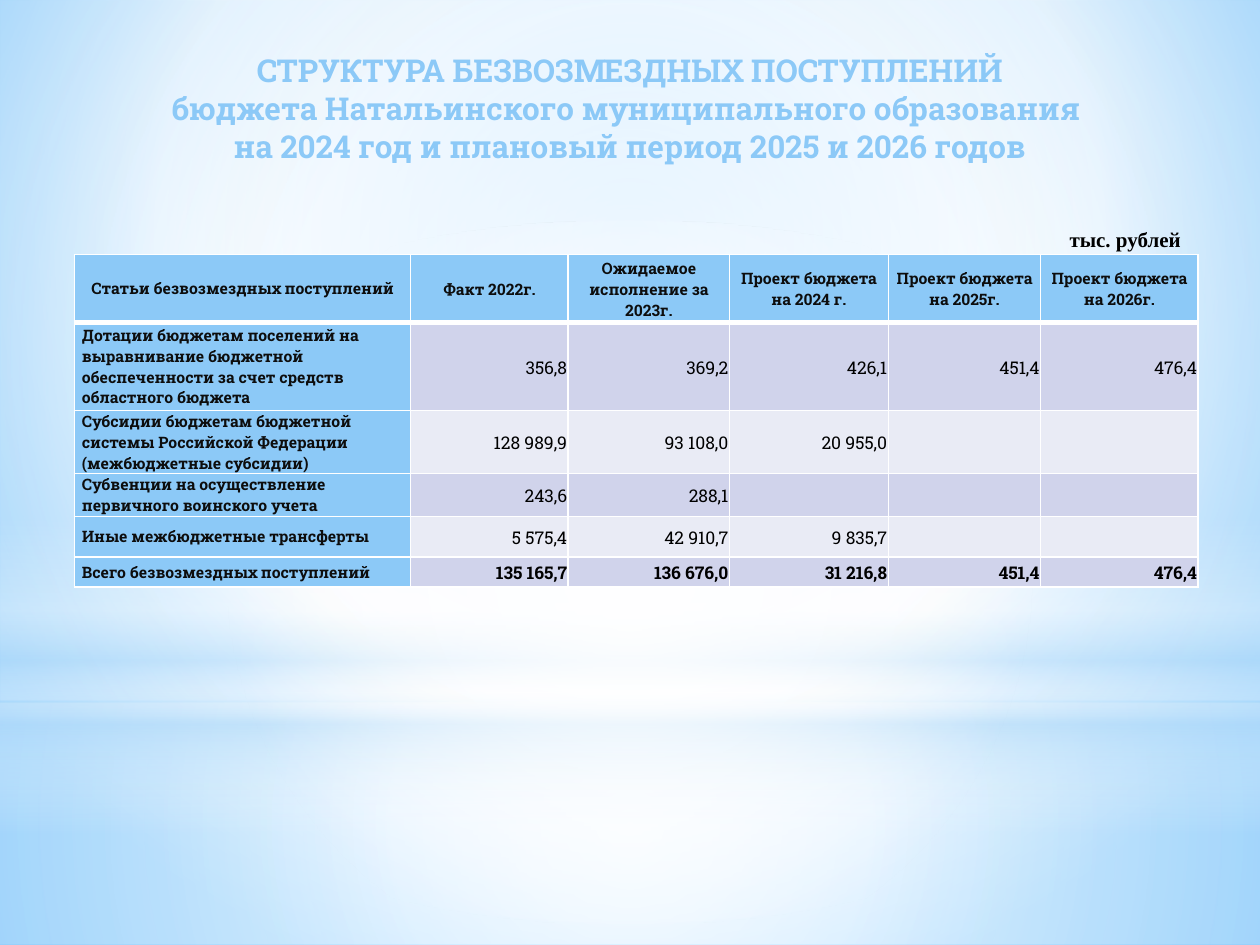
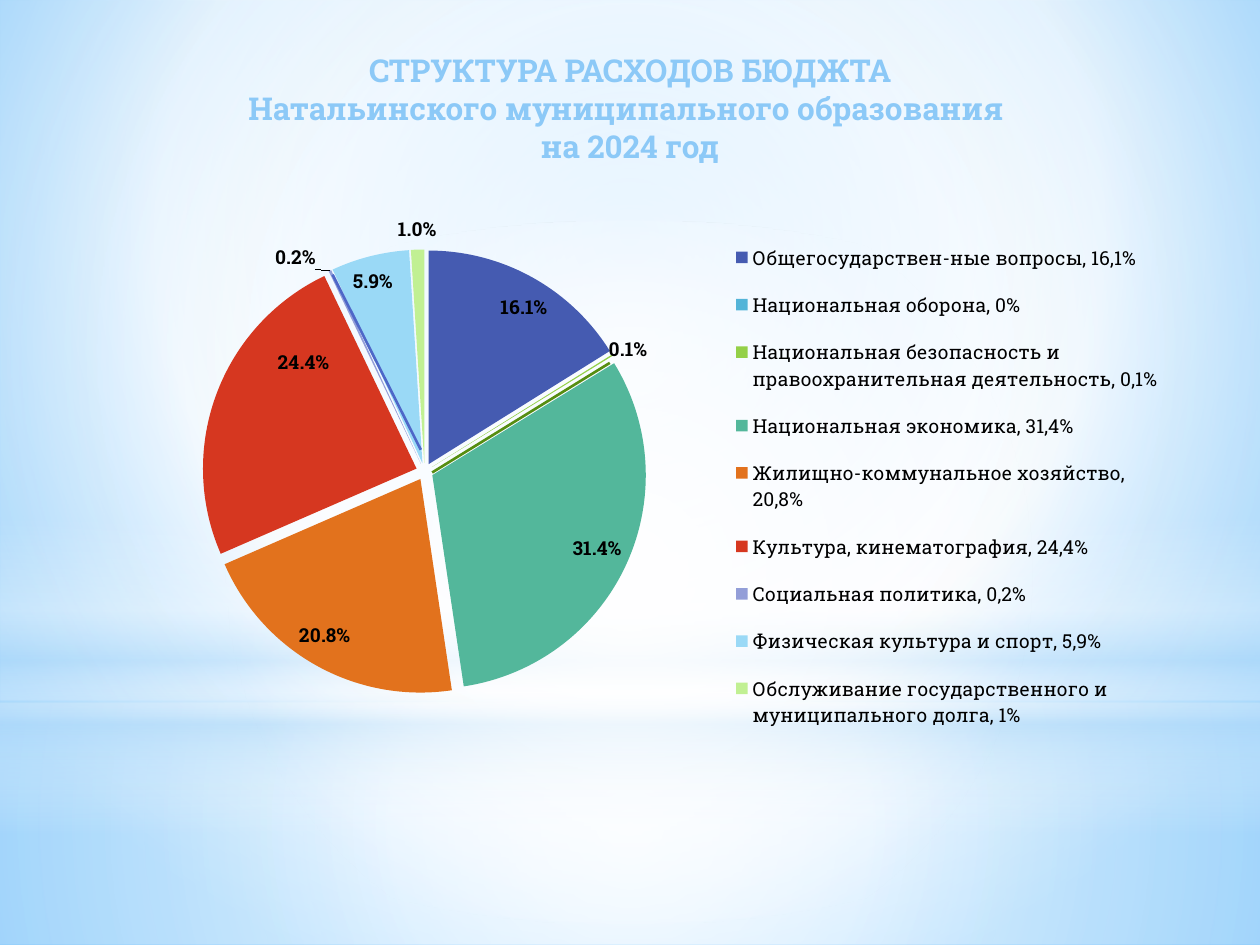
import pptx
import pptx.chart.data
import pptx.dml.color
import pptx.enum.chart
import pptx.enum.shapes
import pptx.enum.text
import pptx.oxml
import pptx.oxml.ns
import pptx.util

Inches = pptx.util.Inches
Pt = pptx.util.Pt
RGB = pptx.dml.color.RGBColor
PP_ALIGN = pptx.enum.text.PP_ALIGN
MIDDLE = pptx.enum.text.MSO_ANCHOR.MIDDLE
MSO_SHAPE = pptx.enum.shapes.MSO_SHAPE
STRAIGHT = pptx.enum.shapes.MSO_CONNECTOR.STRAIGHT
BEST_FIT = pptx.enum.chart.XL_LABEL_POSITION.BEST_FIT

SKY = RGB(0x8C, 0xC9, 0xF7)
BLACK = RGB(0x00, 0x00, 0x00)
INK = RGB(0x0D, 0x0D, 0x0D)
BAND_DARK = RGB(0xD0, 0xD3, 0xEB)
BAND_LIGHT = RGB(0xE9, 0xEB, 0xF5)
BLUE = RGB(0x4E, 0x67, 0xC8)
GREEN = RGB(0x56, 0x8D, 0x11)
SLICES = [RGB(0x45, 0x5B, 0xB1), RGB(0x53, 0xB4, 0xD8), RGB(0x94, 0xD0, 0x48),
          RGB(0x53, 0xB7, 0x9B), RGB(0xE2, 0x72, 0x1D), RGB(0xD6, 0x37, 0x20),
          RGB(0x93, 0x9E, 0xD8), RGB(0x9A, 0xD9, 0xF6), RGB(0xC1, 0xF0, 0x93)]
FONT = "Roboto Slab"
NS = pptx.oxml.ns.nsdecls


def gradient(stops, to=None):
    gs = "".join(
        f'<a:gs pos="{pos * 1000}"><a:srgbClr val="{color}">'
        f'<a:alpha val="{alpha * 1000}"/></a:srgbClr></a:gs>'
        for pos, color, alpha in stops)
    direction = '<a:lin ang="5400000" scaled="0"/>'
    if to:
        l, t, r, b = [v * 1000 for v in to]
        direction = (f'<a:path path="circle"><a:fillToRect l="{l}" t="{t}" '
                     f'r="{r}" b="{b}"/></a:path>')
    return pptx.oxml.parse_xml(f'<a:gradFill {NS("a")} rotWithShape="1">'
                               f'<a:gsLst>{gs}</a:gsLst>{direction}</a:gradFill>')


def style(font, size, color=BLACK, bold=True, name=FONT):
    for key, value in {"size": Pt(size), "bold": bold, "name": name}.items():
        setattr(font, key, value)
    font.color.rgb = color


prs = pptx.Presentation()
prs.slide_width, prs.slide_height = Inches(10), Inches(7.5)

master = prs.slide_master
master.background.fill.solid()
bg = master.element.xpath(".//p:bgPr")[0]
bg.replace(bg[0], gradient([(0, "9ED5FF", 100), (60, "FFFFFF", 100), (100, "5BB9FF", 100)],
                           (20, 10, 20, 60)))

slides = []
for title in [
    "СТРУКТУРА БЕЗВОЗМЕЗДНЫХ ПОСТУПЛЕНИЙ\v"
    "бюджета Натальинского муниципального образования \v"
    "на 2024 год и плановый период 2025 и 2026 годов",
    "СТРУКТУРА РАСХОДОВ БЮДЖТА\v"
    "Натальинского муниципального образования \vна 2024 год",
]:
    s = prs.slides.add_slide(prs.slide_layouts[6])
    slides.append(s)
    tf = s.shapes.add_textbox(Inches(0.5), Inches(0.36), Inches(9), Inches(1.14)).text_frame
    tf.word_wrap = True
    p = tf.paragraphs[0]
    p.text = title
    p.alignment = PP_ALIGN.CENTER
    for r in p.runs:
        style(r.font, 18, SKY)

CENTER = (50, 50, 50, 50)
backdrop = [
    (MSO_SHAPE.RECTANGLE, 5.58, 1.92,
     [(0, "FFFFFF", 91), (37, "FFFFFF", 76), (100, "B4DCFA", 79)], CENTER),
    (MSO_SHAPE.RECTANGLE, 0, 5.57,
     [(0, "FFFFFF", 89), (48, "FFFFFF", 62), (100, "B4DCFA", 79)], CENTER),
    (MSO_SHAPE.RECTANGLE, 4.12, 2.5,
     [(0, "FFFFFF", 0), (29, "FFFFFF", 30), (45, "B4DCFA", 40),
      (55, "FFFFFF", 26), (65, "B4DCFA", 60), (100, "FFFFFF", 0)], None),
    (MSO_SHAPE.OVAL, 1.75, 5.58, [(0, "FFFFFF", 100), (56, "FFFFFF", 0)], CENTER),
]
for i, (kind, top, height, stops, to) in enumerate(backdrop):
    sp = slides[0].shapes.add_shape(kind, 0, Inches(top), Inches(10), Inches(height))
    sp.shadow.inherit = False
    sp.line.fill.background()
    sp.element.spPr.insert(2, gradient(stops, to))
    sp.element.nvSpPr.cNvPr.set("id", str(100 + i))
    master.shapes.element.insert(2 + i, sp.element)

s = slides[0]
rows = [
    ["Статьи безвозмездных поступлений", "Факт 2022г.", "Ожидаемое исполнение за 2023г.",
     "Проект бюджета на 2024 г.", "Проект бюджета на 2025г.", "Проект бюджета на 2026г."],
    ["Дотации бюджетам поселений на выравнивание бюджетной обеспеченности "
     "за счет средств областного бюджета", "356,8", "369,2", "426,1", "451,4", "476,4"],
    ["Субсидии бюджетам бюджетной системы Российской Федерации (межбюджетные субсидии)",
     "128 989,9", "93 108,0", "20 955,0", "", ""],
    ["Субвенции на осуществление первичного воинского учета", "243,6", "288,1", "", "", ""],
    ["Иные межбюджетные трансферты", "5 575,4", "42 910,7", "9 835,7", "", ""],
    ["Всего безвозмездных поступлений", "135 165,7", "136 676,0", "31 216,8", "451,4", "476,4"],
]
table = s.shapes.add_table(6, 6, Inches(0.59), Inches(2.02), Inches(8.91), Inches(2.64)).table
for col, width in zip(table.columns, [2.67, 1.25, 1.28, 1.26, 1.21, 1.25]):
    col.width = Inches(width)
for row, height in zip(table.rows, [0.54, 0.7, 0.5, 0.34, 0.32, 0.24]):
    row.height = Inches(height)
for i, row in enumerate(rows):
    for j, text in enumerate(row):
        cell = table.cell(i, j)
        heading = i == 0 or j == 0
        side, top = (0.06, 0) if j == 0 else (0.01, 0.01)
        for key, value in {"margin_left": Inches(side), "margin_right": Inches(side),
                           "margin_top": Inches(top), "margin_bottom": 0,
                           "vertical_anchor": MIDDLE}.items():
            setattr(cell, key, value)
        cell.fill.solid()
        cell.fill.fore_color.rgb = SKY if heading else BAND_DARK if i % 2 else BAND_LIGHT
        p = cell.text_frame.paragraphs[0]
        p.alignment = PP_ALIGN.CENTER if i == 0 else PP_ALIGN.LEFT if j == 0 else PP_ALIGN.RIGHT
        if text:
            r = p.add_run()
            r.text = text
            style(r.font, 9 if heading else 10, INK if heading else BLACK, heading or i == 5)
        else:
            p._p.get_or_add_endParaRPr().set("sz", "1000")
        widths = {"L": 1, "R": 1, "T": 3 if i == 1 else 1, "B": 3 if i == 0 else 1}
        for k, (edge, width) in enumerate(widths.items()):
            cell._tc.get_or_add_tcPr().insert(k, pptx.oxml.parse_xml(
                f'<a:ln{edge} {NS("a")} w="{Pt(width)}"><a:solidFill>'
                f'<a:srgbClr val="FFFFFF"/></a:solidFill></a:ln{edge}>'))

tf = s.shapes.add_textbox(Inches(8.39), Inches(1.75), Inches(1.26), Inches(0.3)).text_frame
tf.word_wrap = True
r = tf.paragraphs[0].add_run()
r.text = "тыс. рублей"
style(r.font, 12, name="Times New Roman")

s = slides[1]
data = pptx.chart.data.CategoryChartData(number_format="0.0%")
data.categories = [
    "Общегосударствен-ные вопросы, 16,1%", "Национальная оборона, 0%",
    "Национальная безопасность и правоохранительная деятельность, 0,1%",
    "Национальная экономика, 31,4%", "Жилищно-коммунальное хозяйство, 20,8%",
    "Культура, кинематография, 24,4%", "Социальная политика, 0,2%",
    "Физическая культура и спорт, 5,9%",
    "Обслуживание государственного и муниципального долга, 1%",
]
data.add_series("Series 1", [0.161, 0, 0.001, 0.314, 0.208, 0.244, 0.002, 0.059, 0.01])
chart = s.shapes.add_chart(pptx.enum.chart.XL_CHART_TYPE.PIE, Inches(0.59), Inches(1.55),
                           Inches(8.66), Inches(4.44), data).chart
chart.has_title = False
style(chart.font, 18, bold=False, name="Karla")
chart.has_legend = True
chart.legend.position = pptx.enum.chart.XL_LEGEND_POSITION.RIGHT
chart.legend.include_in_layout = False
style(chart.legend.font, 11, bold=False)
plot = chart.plots[0]
plot.vary_by_categories = True
plot.has_data_labels = True
labels = plot.series[0].data_labels
for key, value in {"show_value": True, "show_percentage": False, "number_format": "0.0%",
                   "number_format_is_linked": False, "position": BEST_FIT}.items():
    setattr(labels, key, value)
style(labels.font, 11)
for i, color in enumerate(SLICES):
    fill = plot.series[0].points[i].format.fill
    fill.solid()
    fill.fore_color.rgb = color
ser = chart.element.xpath(".//c:ser")[0]
ser.xpath("c:dPt")[0].addprevious(
    pptx.oxml.parse_xml(f'<c:explosion {NS("c")} val="4"/>'))

for i in (2, 5, 6):
    label = plot.series[0].points[i].data_label
    label.position = BEST_FIT
    style(label.font, 11)
security, culture, social = chart.element.xpath(".//c:dLbl/c:idx")
plot_area = chart.element.xpath(".//c:plotArea")[0]
for old in plot_area.xpath("c:layout"):
    plot_area.remove(old)
INNER = '<c:layoutTarget val="inner"/>'
EDGE = '<c:xMode val="edge"/><c:yMode val="edge"/>'
for place, mode, box in [
    (plot_area, INNER + EDGE, {"x": 0.063, "y": 0.097, "w": 0.516, "h": 0.794}),
    (chart.element.xpath(".//c:legendPos")[0], EDGE, {"x": 0.6, "y": 0.05, "w": 0.4, "h": 0.94}),
    (security, "", {"x": -0.01, "y": 0.02}),
    (culture, "", {"x": 0.11, "y": -0.03}),
    (social, "", {"x": -0.01, "y": 0.01}),
]:
    values = "".join(f'<c:{key} val="{value}"/>' for key, value in box.items())
    layout = pptx.oxml.parse_xml(f'<c:layout {NS("c")}><c:manualLayout>{mode}{values}'
                                 f'</c:manualLayout></c:layout>')
    if place is plot_area:
        place.insert(0, layout)
    else:
        place.addnext(layout)

for x1, y1, x2, y2, color in [(2.64, 2.18, 3.34, 3.57, BLUE), (3.43, 3.75, 4.84, 2.88, GREEN)]:
    line = s.shapes.add_connector(STRAIGHT, Inches(x1), Inches(y1), Inches(x2), Inches(y2))
    line.line.color.rgb = color
    line.line.width = Pt(1.5)
    line.element.spPr.append(pptx.oxml.parse_xml(f'<a:effectLst {NS("a")}/>'))

prs.save("out.pptx")
